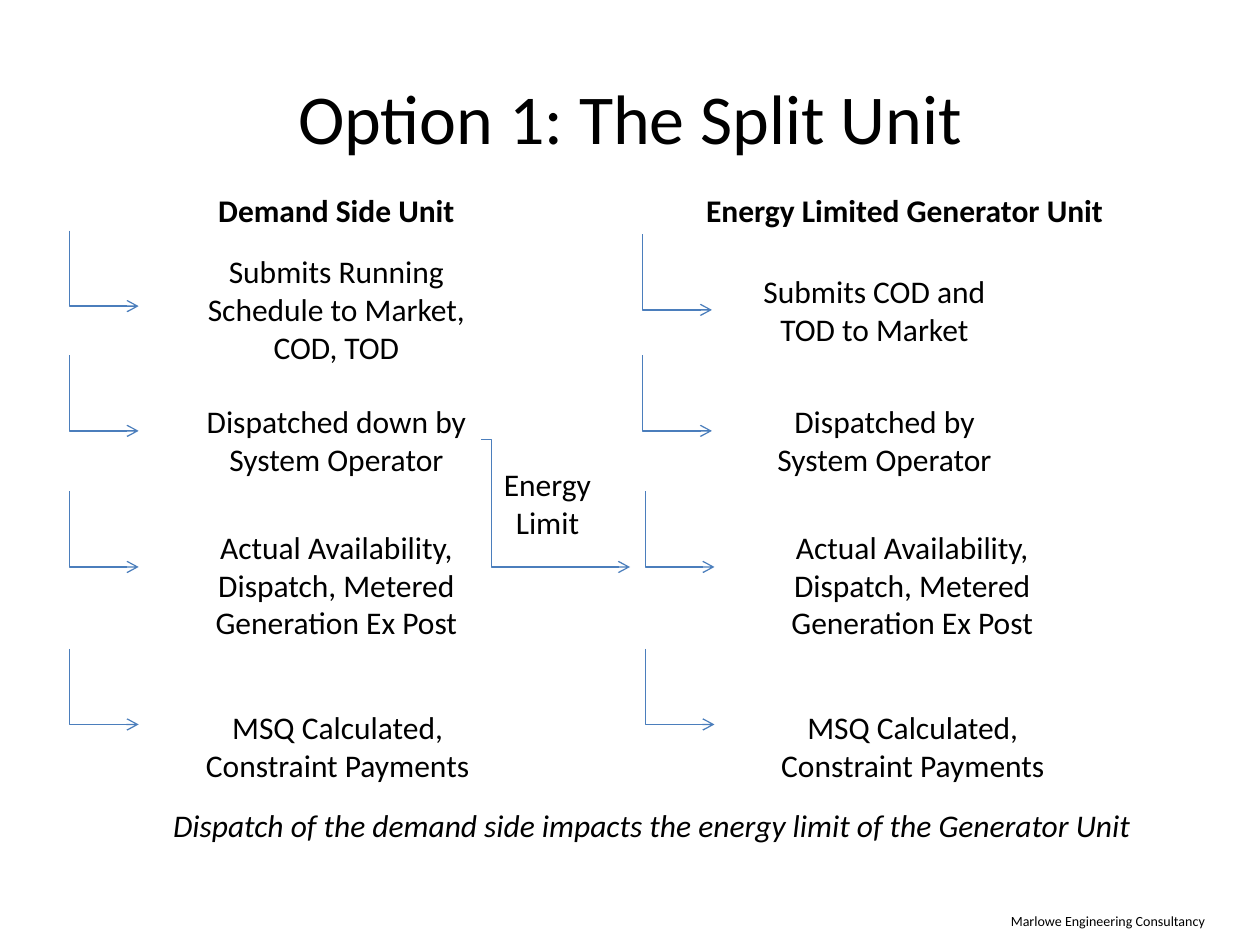
"""Build the split unit slide: two process columns linked by an energy limit."""
from dataclasses import dataclass

import pptx
import pptx.dml.color
import pptx.enum.shapes
import pptx.enum.text
import pptx.oxml
import pptx.oxml.ns
import pptx.util
from pptx.util import Inches

COLOURS = {"text": "000000", "arrow": "4B7EBC"}
FONT = "Calibri"
DROP, RUN = 0.6, 0.55
LEFT_ARROWS, RIGHT_ARROWS = 0.55, 5.1


@dataclass(frozen=True)
class Label:
    text: str
    left: float
    top: float
    width: float
    height: float
    size: float = 18
    bold: bool = False
    italic: bool = False
    middle: bool = False
    inset: float | None = None


@dataclass(frozen=True)
class Step:
    left: float
    top: float


AVAILABILITY = "Actual Availability, Dispatch, Metered Generation Ex Post"
PAYMENTS = "MSQ Calculated, Constraint Payments"

LABELS = [
    Label("Option 1: The Split Unit", 0.5, 0.3, 9, 1.25, size=40, middle=True),
    Label("Demand Side Unit", 1.53, 1.47, 2.28, 0.4, bold=True),
    Label("Submits Running Schedule to Market, COD, TOD", 1.53, 1.95, 2.28, 1.01),
    Label("Dispatched down by System Operator", 1.53, 3.14, 2.28, 0.71),
    Label(AVAILABILITY, 1.53, 4.14, 2.28, 1.01),
    Label(PAYMENTS, 1.38, 5.57, 2.6, 0.71),
    Label("Energy Limited Generator Unit", 5.5, 1.47, 3.36, 0.4, bold=True),
    Label("Submits COD and TOD to Market", 5.8, 2.11, 2.28, 0.71),
    Label("Dispatched by System Operator", 5.88, 3.14, 2.28, 0.71),
    Label(AVAILABILITY, 6.1, 4.14, 2.28, 1.01),
    Label(PAYMENTS, 5.88, 5.57, 2.73, 0.71),
    Label("Energy\nLimit", 3.74, 3.64, 1.21, 0.71),
    Label("Dispatch of the demand side impacts the energy limit of the Generator Unit",
          0.5, 6.35, 9.35, 0.4, italic=True),
    Label("Marlowe Engineering Consultancy", 7.68, 7.2, 2.23, 0.25, size=8, inset=0.04),
]

STEPS = [Step(LEFT_ARROWS, top) for top in (1.83, 2.82, 3.9, 5.15)] + [
    Step(RIGHT_ARROWS, 1.86),
    Step(RIGHT_ARROWS, 2.82),
    Step(RIGHT_ARROWS + 0.02, 3.9),
    Step(RIGHT_ARROWS + 0.02, 5.15),
]


def colour(name: str) -> pptx.dml.color.RGBColor:
    """Return a named colour."""
    return pptx.dml.color.RGBColor.from_string(COLOURS[name])


def draw_label(page, label: Label) -> None:
    """Draw one centred text box."""
    box = page.shapes.add_textbox(
        Inches(label.left), Inches(label.top), Inches(label.width), Inches(label.height))
    frame = box.text_frame
    frame.word_wrap = True
    if label.middle:
        frame.vertical_anchor = pptx.enum.text.MSO_ANCHOR.MIDDLE
    if label.inset is not None:
        frame.margin_left = frame.margin_right = Inches(label.inset)
        frame.margin_top = frame.margin_bottom = Inches(label.inset)
    para = frame.paragraphs[0]
    para.alignment = pptx.enum.text.PP_ALIGN.CENTER
    for index, line in enumerate(label.text.split("\n")):
        if index:
            para.add_line_break()
        span = para.add_run()
        span.text = line
        span.font.name = FONT
        span.font.size = pptx.util.Pt(label.size)
        span.font.bold = label.bold
        span.font.italic = label.italic
        span.font.color.rgb = colour("text")


def draw_elbow(page, begin: tuple[float, float], end: tuple[float, float],
               bend: float, rotation: int = 0) -> None:
    """Draw a bent arrow that turns at the given share of its width."""
    elbow = page.shapes.add_connector(
        pptx.enum.shapes.MSO_CONNECTOR.ELBOW, *(Inches(value) for value in begin + end))
    elbow.line.color.rgb = colour("arrow")
    elbow.line.width = pptx.util.Pt(0.75)
    properties = elbow._element.spPr
    qn = pptx.oxml.ns.qn
    if rotation:
        properties.find(qn("a:xfrm")).set("rot", str(rotation * 60000))
    namespace = pptx.oxml.ns.nsdecls("a")
    adjustments = properties.find(qn("a:prstGeom")).find(qn("a:avLst"))
    adjustments.append(pptx.oxml.parse_xml(
        f'<a:gd {namespace} name="adj1" fmla="val {round(bend * 100000)}"/>'))
    properties.find(qn("a:ln")).append(
        pptx.oxml.parse_xml(f'<a:tailEnd {namespace} type="arrow"/>'))
    properties.append(pptx.oxml.parse_xml(f"<a:effectLst {namespace}/>"))


def draw_step(page, step: Step) -> None:
    """Draw an arrow that drops and then turns right."""
    middle_x, middle_y = step.left + RUN / 2, step.top + DROP / 2
    draw_elbow(page, (middle_x + DROP / 2, middle_y - RUN / 2),
               (middle_x - DROP / 2, middle_y + RUN / 2), bend=1, rotation=270)


def main() -> None:
    """Build and save the deck."""
    deck = pptx.Presentation()
    deck.slide_width, deck.slide_height = Inches(10), Inches(7.5)
    page = deck.slides.add_slide(deck.slide_layouts[6])
    for step in STEPS:
        draw_step(page, step)
    draw_elbow(page, (3.82, 3.49), (5, 4.5), bend=0.07)
    for label in LABELS:
        draw_label(page, label)
    deck.save("out.pptx")


if __name__ == "__main__":
    main()
